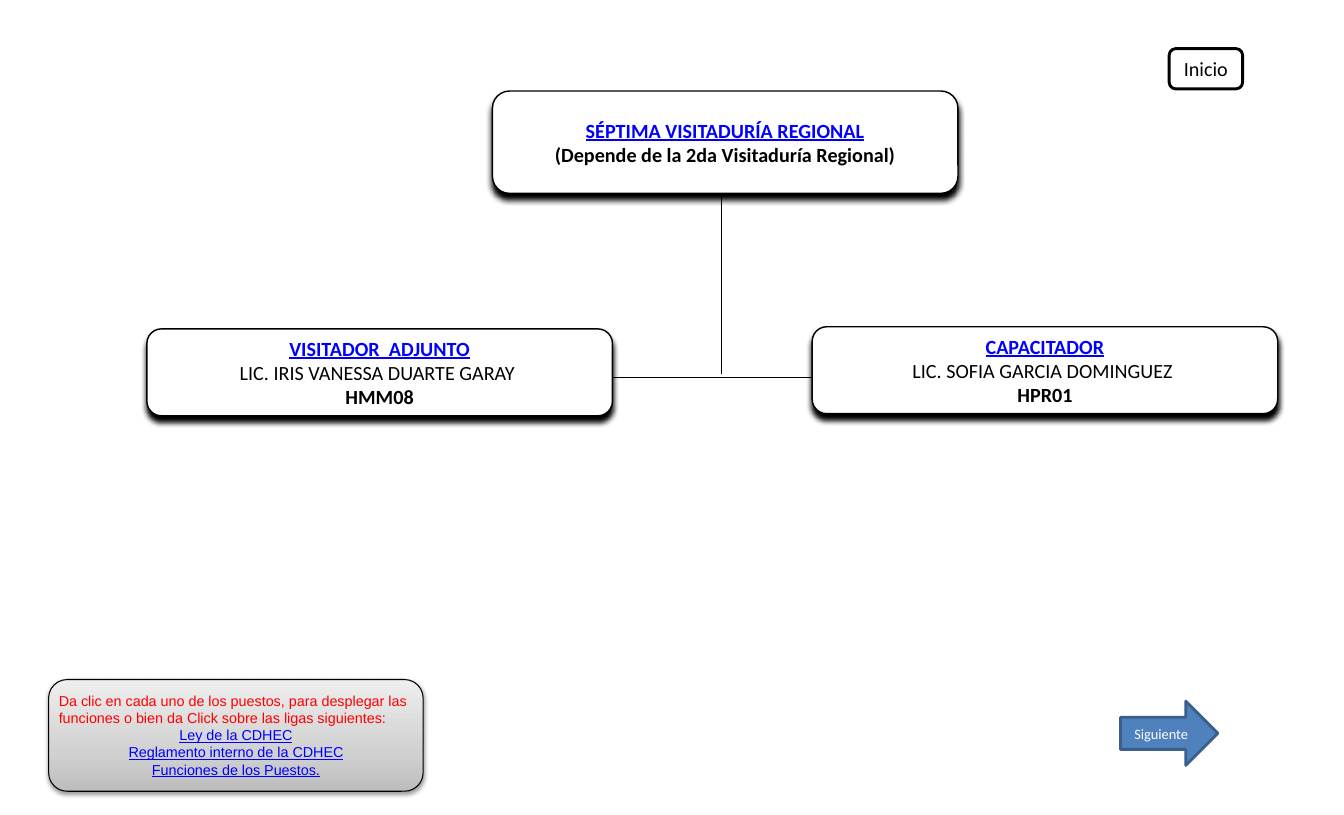
from copy import deepcopy

from lxml.etree import SubElement
from pptx import Presentation
from pptx.dml.color import RGBColor
from pptx.enum.shapes import MSO_CONNECTOR as Connector, MSO_SHAPE as Shape
from pptx.enum.text import MSO_ANCHOR as Anchor, MSO_AUTO_SIZE as AutoSize, PP_ALIGN as Align
from pptx.oxml.ns import qn
from pptx.util import Inches, Pt

WIDTH, HEIGHT = Inches(12.99), Inches(7.88)
BLACK, WHITE, LINK, RED = "000000", "FFFFFF", "0000FF", "FF0000"
POST_WIDTH, POST_HEIGHT = 34.64, 10.66
NOTE_LEFT, NOTE_WIDTH = 3.62, 27.87


def color(value):
    """Turn a hex string into a colour."""
    return RGBColor.from_string(value)


def across(share):
    """Turn a percentage of the slide width into a length."""
    return round(WIDTH * share / 100)


def down(share):
    """Turn a percentage of the slide height into a length."""
    return round(HEIGHT * share / 100)


def place(left, top, width, height):
    """Turn percentages of the slide into a position and a size."""
    return across(left), down(top), across(width), down(height)


def add_line(slide, start, end):
    """Draw a thin black line between two points."""
    line = slide.shapes.add_connector(
        Connector.STRAIGHT, across(start[0]), down(start[1]), across(end[0]), down(end[1]))
    line.line.color.rgb = color(BLACK)
    line.line.width = Pt(0.75)
    SubElement(line._element.spPr, qn("a:effectLst"))


def add_box(slide, kind, area, fill, outline, weight):
    """Add a filled and outlined preset shape without a shadow."""
    shape = slide.shapes.add_shape(kind, *place(*area))
    shape.shadow.inherit = False
    shape.fill.solid()
    shape.fill.fore_color.rgb = color(fill)
    shape.line.color.rgb = color(outline)
    shape.line.width = Pt(weight)
    return shape


def add_shadow(shape, blur, distance, opacity):
    """Cast a black shadow straight down."""
    effects = shape._element.spPr.find(qn("a:effectLst"))
    shadow = SubElement(effects, qn("a:outerShdw"), blurRad=str(Pt(blur)),
                        dist=str(Pt(distance)), dir="5400000", rotWithShape="0")
    black = SubElement(shadow, qn("a:srgbClr"), val=BLACK)
    SubElement(black, qn("a:alpha"), val=str(opacity * 1000))


def add_gradient(shape, stops):
    """Fill a shape from bottom to top with the given stops."""
    shape.fill.gradient()
    shape.fill.gradient_angle = 90
    stop_list = next(shape._element.spPr.iter(qn("a:gsLst")))
    stop_list.insert(1, deepcopy(stop_list[0]))
    for stop, (position, value) in zip(shape.fill.gradient_stops, stops):
        stop.position = position
        stop.color.rgb = color(value)


def write(shape, lines, font, size, align=Align.CENTER):
    """Write lines given as text, colour, bold and underline."""
    frame = shape.text_frame
    frame.text = "\n".join(line[0] for line in lines)
    for paragraph, (text, value, bold, underline) in zip(frame.paragraphs, lines):
        paragraph.alignment = align
        run_font = paragraph.runs[0].font
        run_font.name, run_font.size = font, Pt(size)
        run_font.color.rgb = color(value)
        run_font.bold, run_font.underline = bold, underline


def add_post(slide, left, top, height, title, *details):
    """Add a box of the chart with a linked title and its details."""
    post = add_box(slide, Shape.ROUNDED_RECTANGLE, (left, top, POST_WIDTH, height),
                   WHITE, BLACK, 1)
    add_shadow(post, 4, 4, 100)
    frame = post.text_frame
    frame.word_wrap = False
    frame.vertical_anchor = Anchor.MIDDLE
    frame.margin_left = frame.margin_right = Inches(0.17)
    frame.margin_top = frame.margin_bottom = Inches(0.09)
    lines = [(text, BLACK, bold, False) for text, bold in details]
    write(post, [(title, LINK, True, True), *lines], "Calibri", 14)


def add_button(slide, kind, area, text, size, fill, outline, ink):
    """Add a navigation button."""
    button = add_box(slide, kind, area, fill, outline, 2)
    button.text_frame.vertical_anchor = Anchor.MIDDLE
    write(button, [(text, ink, False, False)], "Calibri", size)


def add_note(slide):
    """Add the grey panel with the instructions and links."""
    panel = add_box(slide, Shape.ROUNDED_RECTANGLE,
                    (NOTE_LEFT, 83.38, NOTE_WIDTH, 13.71), WHITE, BLACK, 0.75)
    add_gradient(panel, [(0, "BDBDBD"), (0.35, "D1D1D1"), (1, "EEEEEE")])
    add_shadow(panel, 3.1, 1.6, 38)
    note = slide.shapes.add_textbox(*place(NOTE_LEFT, 84.26, NOTE_WIDTH, 11.93))
    note.text_frame.word_wrap = True
    note.text_frame.auto_size = AutoSize.SHAPE_TO_FIT_TEXT
    instruction = ("Da clic en cada uno de los puestos, para desplegar las funciones "
                   "o bien da Click sobre las ligas siguientes:")
    links = ["Ley de la CDHEC", "Reglamento interno de la CDHEC", "Funciones de los Puestos."]
    write(note, [(instruction, RED, False, False),
                 *((link, LINK, False, True) for link in links)], "Arial", 10)
    note.text_frame.paragraphs[0].alignment = Align.LEFT


def main():
    """Build the organisation chart slide."""
    presentation = Presentation()
    presentation.slide_width, presentation.slide_height = WIDTH, HEIGHT
    slide = presentation.slides.add_slide(presentation.slide_layouts[6])
    add_line(slide, (44.57, 46.32), (62.28, 46.32))
    add_post(slide, 36.64, 11.17, 12.56, "SÉPTIMA VISITADURÍA REGIONAL",
             ("(Depende de la 2da Visitaduría Regional)", True))
    add_line(slide, (53.66, 23.98), (53.66, 45.94))
    add_post(slide, 10.93, 40.36, POST_HEIGHT, "VISITADOR  ADJUNTO",
             ("LIC. IRIS VANESSA DUARTE GARAY ", False), ("HMM08", True))
    add_post(slide, 60.43, 40.1, POST_HEIGHT, "CAPACITADOR",
             ("LIC. SOFIA GARCIA DOMINGUEZ ", False), ("HPR01", True))
    add_button(slide, Shape.ROUNDED_RECTANGLE, (86.99, 5.96, 5.47, 4.95),
               "Inicio", 14, WHITE, BLACK, BLACK)
    add_note(slide)
    add_button(slide, Shape.RIGHT_ARROW, (83.37, 86.04, 7.24, 7.87),
               "Siguiente", 10, "4F81BD", "3A5F8C", WHITE)
    presentation.save("out.pptx")


if __name__ == "__main__":
    main()
